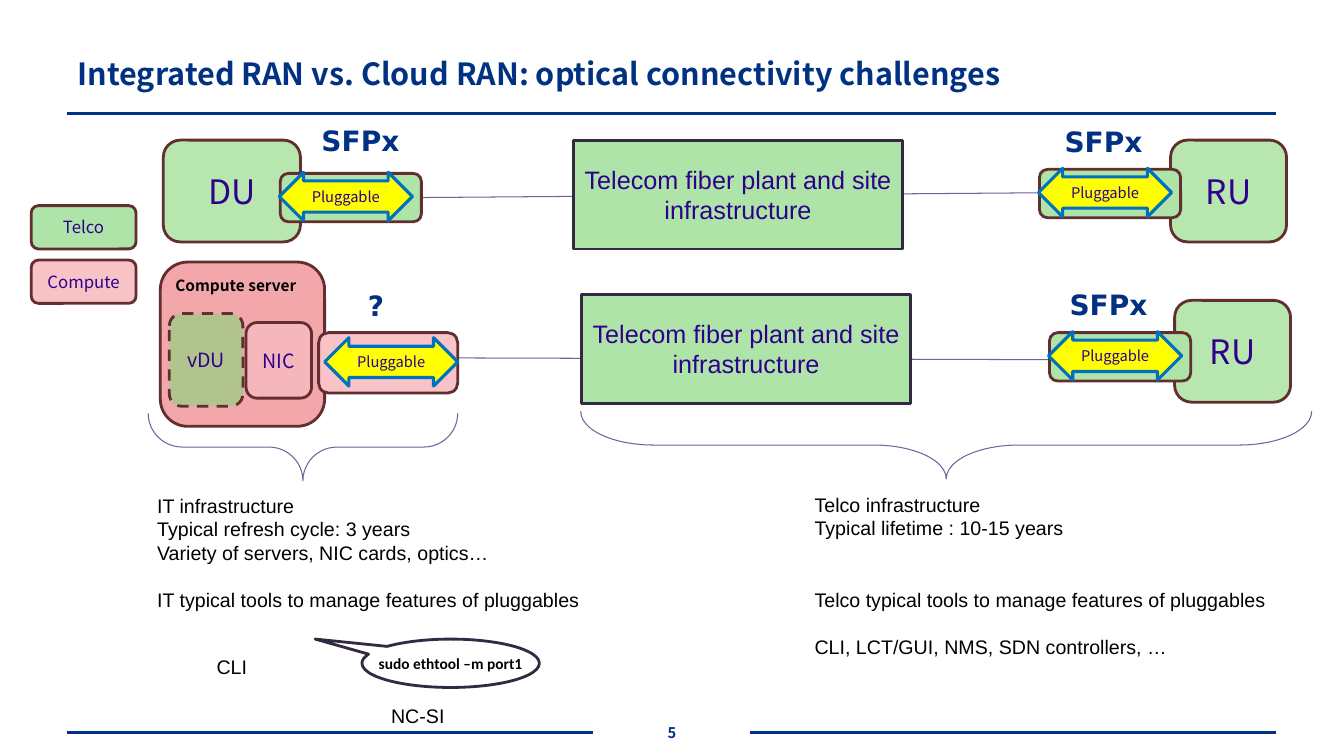
import pptx
import pptx.util
import pptx.dml.color
import pptx.enum.dml
import pptx.enum.shapes
import pptx.enum.text
import pptx.oxml.ns
import pptx.oxml.xmlchemy

Inches = pptx.util.Inches
Pt = pptx.util.Pt
SHAPE = pptx.enum.shapes.MSO_SHAPE
ALIGN = pptx.enum.text.PP_ALIGN
ANCHOR = pptx.enum.text.MSO_ANCHOR

SANS = "Noto Sans CJK JP"
HEAVY = "DejaVu Sans"
NAVY = "003182"
PURPLE = "2E008B"
BLACK = "000000"
BROWN = "632E30"
DARK = "332943"
MAUVE = "775E9C"
GREEN = "AFE4A8"
LEAF = "88D87B"
PINK = "F7C3C6"
RED = "EC6D74"
BLANK_LINE = 17


def color(value):
    return pptx.dml.color.RGBColor.from_string(value)


def add_run(p, text, size, font, hue, bold=False):
    r = p.add_run()
    r.text = text
    r.font.size = Pt(size)
    r.font.name = font
    r.font.bold = bold
    r.font.color.rgb = color(hue)


def add_text(s, box, lines, size, font, hue, bold=False, align=ALIGN.LEFT,
             anchor=ANCHOR.TOP):
    tf = s.shapes.add_textbox(*map(Inches, box)).text_frame
    tf.word_wrap = True
    tf.vertical_anchor = anchor
    for i, (text, blanks) in enumerate(lines):
        p = tf.paragraphs[0] if i == 0 else tf.add_paragraph()
        p.alignment = align
        if blanks:
            p.space_before = Pt(blanks * BLANK_LINE)
        add_run(p, text, size, font, hue, bold)
    return tf


def add_line(s, start, end, hue, width):
    line = s.shapes.add_connector(
        pptx.enum.shapes.MSO_CONNECTOR.STRAIGHT, *map(Inches, start + end))
    line.line.color.rgb = color(hue)
    line.line.width = Pt(width)
    line._element.spPr.append(pptx.oxml.xmlchemy.OxmlElement("a:effectLst"))


def add_block(s, kind, box, fill, outline, width=2, text="", size=12,
              font=SANS, hue=PURPLE, bold=False, alpha=None, wrap=True):
    sp = s.shapes.add_shape(kind, *map(Inches, box))
    sp.shadow.inherit = False
    sp.line.color.rgb = color(outline)
    sp.line.width = Pt(width)
    if fill:
        sp.fill.solid()
        sp.fill.fore_color.rgb = color(fill)
    else:
        sp.fill.background()
    if alpha:
        srgb = sp._element.spPr.find(".//" + pptx.oxml.ns.qn("a:srgbClr"))
        opacity = pptx.oxml.xmlchemy.OxmlElement("a:alpha")
        opacity.set("val", str(alpha * 1000))
        srgb.append(opacity)
    if text:
        tf = sp.text_frame
        tf.word_wrap = wrap
        tf.vertical_anchor = ANCHOR.MIDDLE
        p = tf.paragraphs[0]
        p.alignment = ALIGN.CENTER
        add_run(p, text, size, font, hue, bold)
    return sp


def add_unit(s, box, text, size=24, fill=LEAF):
    return add_block(s, SHAPE.ROUNDED_RECTANGLE, box, fill, BROWN,
                     text=text, size=size, alpha=60)


def add_label(s, x, y, text):
    tf = add_text(s, (x, y, 1.24, 0.57), [(text, 0)], 20, HEAVY, NAVY, True)
    p = tf.paragraphs[0]
    p.line_spacing = 0.9
    pPr = p._p.get_or_add_pPr()
    pPr.set("marL", str(Inches(0.08)))
    pPr.set("indent", "0")


def add_pluggable(s, box, fill=GREEN, dx=-0.01, dy=-0.01):
    x, y, w, h = box
    add_block(s, SHAPE.ROUNDED_RECTANGLE, box, fill, BROWN)
    arrow = add_block(s, SHAPE.LEFT_RIGHT_ARROW, (x + dx, y + dy, 1.32, 0.48),
                      "FFFF00", "0070C0", 2.25, "Pluggable", 10.5)
    arrow.adjustments[0] = 0.647
    arrow.adjustments[1] = 0.5


def add_brace(s, x, y, w, h, bend):
    box = (x + (w - h) / 2, y + (h - w) / 2, h, w)
    sp = add_block(s, SHAPE.LEFT_BRACE, box, None, MAUVE, 0.75)
    sp.rotation = 270
    sp.adjustments[0] = bend
    sp.adjustments[1] = 0.5


def frame(s, number):
    title = s.shapes.title
    title.left, title.top, title.width, title.height = map(
        Inches, (0.67, 0.47, 12, 0.57))
    tf = title.text_frame
    tf.word_wrap = True
    tf.auto_size = pptx.enum.text.MSO_AUTO_SIZE.NONE
    tf.vertical_anchor = ANCHOR.MIDDLE
    p = tf.paragraphs[0]
    p.alignment = ALIGN.LEFT
    p.line_spacing = 0.9
    add_run(p, "Integrated RAN vs. Cloud RAN: optical connectivity challenges",
            21.8, SANS, NAVY, True)
    for x1, x2, y in ((0.66, 12.66, 1.13), (0.66, 5.88, 7.27), (7.44, 12.66, 7.27)):
        add_line(s, (x1, y), (x2, y), NAVY, 2)
    add_text(s, (5.73, 7.07, 1.87, 0.4), [(number, 0)], 10.5, SANS, NAVY, True,
             ALIGN.CENTER, ANCHOR.MIDDLE)


def legend(s, x, y):
    for i, (text, fill) in enumerate((("Telco", GREEN), ("Compute", PINK))):
        add_block(s, SHAPE.ROUNDED_RECTANGLE, (x, y + i * 0.54, 1.04, 0.43),
                  fill, BROWN, text=text)


def fiber_link(s, start, end, plant, radio, plug, label):
    add_line(s, start, end, MAUVE, 0.75)
    add_block(s, SHAPE.RECTANGLE, plant + (3.26, 1.08), GREEN, DARK,
              text="Telecom fiber plant and site infrastructure", size=18, font="Arial")
    add_unit(s, radio + (1.15, 1.01), "RU")
    add_label(s, *label, "SFPx")
    add_pluggable(s, plug + (1.4, 0.48))


def integrated_unit(s, x, y):
    add_unit(s, (x, y, 1.36, 1.01), "DU")
    add_label(s, x + 1.39, y - 0.18, "SFPx")
    add_pluggable(s, (x + 1.16, y + 0.33, 1.4, 0.48))


def compute_server(s, x, y):
    add_unit(s, (x, y, 1.63, 1.63), "", fill=RED)
    add_text(s, (x + 0.05, y + 0.09, 1.61, 0.29), [("Compute server", 0)],
             11, SANS, BLACK, True)
    vdu = add_unit(s, (x + 0.09, y + 0.51, 0.73, 0.92), "vDU", 14)
    vdu.line.dash_style = pptx.enum.dml.MSO_LINE.DASH
    add_unit(s, (x + 0.85, y + 0.6, 0.65, 0.75), "NIC", 14, PINK)
    add_label(s, x + 1.88, y + 0.25, "?")
    add_pluggable(s, (x + 1.57, y + 0.7, 1.38, 0.6), PINK, 0.06, 0.05)


def it_notes(s, x, y):
    add_brace(s, x, y, 3.07, 0.67, 0.505)
    lines = [("IT infrastructure", 0), ("Typical refresh cycle: 3 years", 0),
             ("Variety of servers, NIC cards, optics…", 0),
             ("IT typical tools to manage features of pluggables", 1)]
    add_text(s, (x - 0.01, y + 0.75, 4.52, 1.28), lines, 14, "Arial", BLACK)
    add_text(s, (x + 0.58, y + 2.35, 0.66, 0.34), [("CLI", 0)], 14, "Arial", BLACK)
    add_text(s, (x + 2.31, y + 2.83, 0.89, 0.34), [("NC-SI", 0)], 14, "Arial", BLACK)
    callout = add_block(s, SHAPE.OVAL_CALLOUT, (x + 2.12, y + 2.24, 1.76, 0.48),
                        None, DARK, text="sudo ethtool –m port1", size=11,
                        font="Calibri", hue=BLACK, bold=True, wrap=False)
    callout.adjustments[0] = -0.764
    callout.adjustments[1] = -0.501


def telco_notes(s, x, y):
    add_brace(s, x, y, 7.25, 0.67, 1.075)
    lines = [("Telco infrastructure", 0), ("Typical lifetime : 10-15 years", 0),
             ("Telco typical tools to manage features of pluggables", 2),
             ("CLI, LCT/GUI, NMS, SDN controllers, …", 1)]
    add_text(s, (x + 2.22, y + 0.76, 4.69, 1.99), lines, 14, "Arial", BLACK)


def main():
    prs = pptx.Presentation()
    prs.slide_width, prs.slide_height = Inches(13.33), Inches(7.5)
    s = prs.slides.add_slide(prs.slide_layouts.get_by_name("Title Only"))
    frame(s, "5")
    legend(s, 0.31, 2.04)
    fiber_link(s, (4.18, 1.96), (10.66, 1.91), (5.69, 1.39), (11.61, 1.39),
               (10.31, 1.68), (10.38, 1.22))
    integrated_unit(s, 1.62, 1.39)
    fiber_link(s, (4.22, 3.55), (10.96, 3.57), (5.77, 2.92), (11.65, 2.98),
               (10.41, 3.3), (10.43, 2.84))
    compute_server(s, 1.59, 2.6)
    it_notes(s, 1.47, 4.1)
    telco_notes(s, 5.76, 4.08)
    prs.save("out.pptx")


if __name__ == "__main__":
    main()
